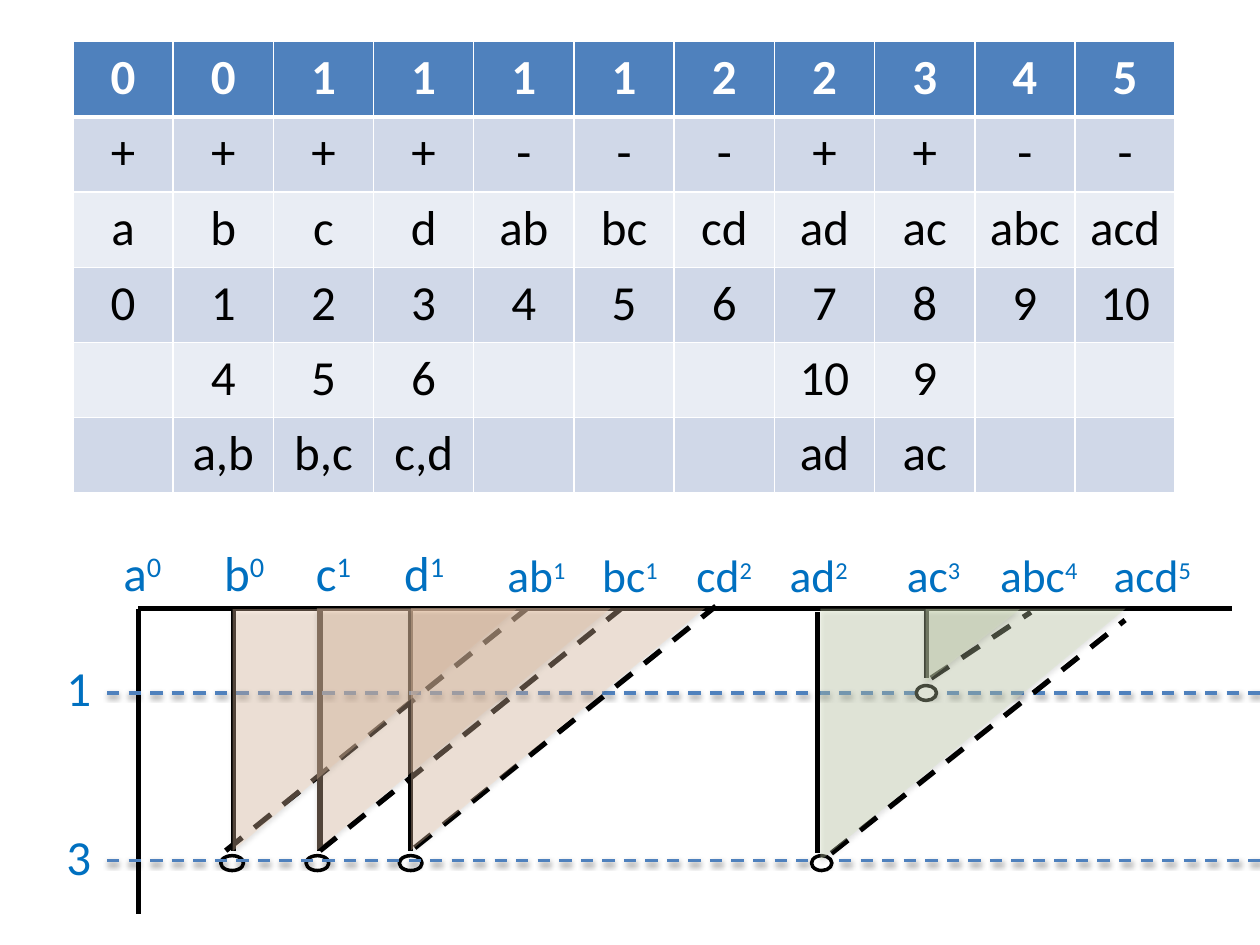
from dataclasses import dataclass
from typing import NamedTuple

import lxml.etree
import pptx
import pptx.dml.color
import pptx.enum.dml
import pptx.enum.shapes
import pptx.enum.text
import pptx.oxml
import pptx.oxml.ns
import pptx.util

Cm = pptx.util.Cm
Pt = pptx.util.Pt
Shape = pptx.enum.shapes.MSO_SHAPE
qn = pptx.oxml.ns.qn


@dataclass(frozen=True)
class Theme:
    font: str = "Calibri"
    head: str = "4F81BD"
    bands: tuple = ("D0D8E8", "E9EDF4")
    white: str = "FFFFFF"
    black: str = "000000"
    label: str = "0070C0"
    peach: str = "FCD5B5"
    green: str = "D7E4BD"
    large: int = 28
    small: int = 26
    power: int = 24
    thick: float = 3
    level: float = 1.75
    ring: float = 2
    clear: int = 32


THEME = Theme()


class Label(NamedTuple):
    text: str
    power: str
    left: float
    width: float
    height: float = 1.45
    top: float = 10.82
    size: int = THEME.large
    raised: int = THEME.large


class Wedge(NamedTuple):
    stem: tuple  # x, top, bottom
    slope: tuple  # x1, y1, x2, y2
    ring: tuple  # left, top, width
    area: tuple  # left, top, width, height
    fill: str


def small(text: str, power: str, left: float, width: float, height: float = 1.37) -> Label:
    return Label(text, power, left, width, height, 10.9, THEME.small, THEME.power)


ROWS = [
    "0 0 1 1 1 1 2 2 3 4 5".split(),
    "+ + + + - - - + + - -".split(),
    "a b c d ab bc cd ad ac abc acd".split(),
    [str(n) for n in range(11)],
    ["", "4", "5", "6", "", "", "", "10", "9", "", ""],
    ["", "a,b", "b,c", "c,d", "", "", "", "ad", "ac", "", ""],
]
LABELS = [
    Label("a", "0", 2.24, 1.6), Label("b", "0", 4.27, 1.6, 2.64),
    Label("c", "1", 6.12, 1.6), Label("d", "1", 7.9, 1.6),
    small("ab", "1", 9.98, 2.29, 2.49), small("bc", "1", 11.89, 1.7),
    small("cd", "2", 13.79, 1.7), small("ad", "2", 15.67, 2.54),
    small("ac", "3", 18.03, 2.54), small("abc", "4", 19.91, 2.57),
    small("acd", "5", 22.2, 2.57),
    Label("1", "", 1.09, 1.07, top=13.13), Label("3", "", 1.09, 1.07, top=16.54),
]
AXIS = 12.27
LEVELS = (17.35, 13.97)
LEFT = [
    Wedge((4.7, AXIS, 17.15), (4.55, 17.15, 10.62, AXIS), (4.45, 17.25, 0.46),
          (4.69, 12.28, 5.72, 4.88), THEME.peach),
    Wedge((6.45, AXIS, 17.15), (6.45, 17.15, 12.52, AXIS), (6.17, 17.25, 0.46),
          (6.39, 12.26, 5.92, 4.88), THEME.peach),
    Wedge((8.28, AXIS, 17.15), (8.36, 17.09, 14.43, 12.22), (8.05, 17.25, 0.46),
          (8.29, 12.26, 5.92, 4.88), THEME.peach),
]
RIGHT = [
    Wedge((16.48, 12.34, 17.2), (16.76, 17.2, 22.68, 12.5), (16.36, 17.25, 0.41),
          (16.54, AXIS, 6.15, 5.08), THEME.green),
    Wedge((18.67, AXIS, 13.67), (18.77, 13.67, 20.78, 12.34), (18.47, 13.82, 0.41),
          (18.66, 12.28, 1.9, 1.47), THEME.green),
]


def rgb(code: str):
    return pptx.dml.color.RGBColor.from_string(code)


def style(item, **values) -> None:
    for name, value in values.items():
        setattr(item, name, value)


def write(para, text: str, size: float, code: str, bold: bool = False):
    run = para.add_run()
    run.text = text
    style(run.font, name=THEME.font, size=Pt(size), bold=bold)
    run.font.color.rgb = rgb(code)
    return run


def add_shade(parent, alpha: int, dist: float) -> None:
    """Put a soft black shadow straight below."""
    shade = lxml.etree.SubElement(parent, qn("a:outerShdw"), blurRad=str(Pt(3.1)),
                                  dist=str(Pt(dist)), dir="5400000", rotWithShape="0")
    tone = lxml.etree.SubElement(shade, qn("a:srgbClr"), val=THEME.black)
    lxml.etree.SubElement(tone, qn("a:alpha"), val=str(alpha * 1000))


def add_line(slide, ends: tuple, code: str = THEME.black, width: float = THEME.thick,
             dash: bool = False):
    line = slide.shapes.add_connector(pptx.enum.shapes.MSO_CONNECTOR.STRAIGHT, *map(Cm, ends))
    line.line.color.rgb = rgb(code)
    line.line.width = Pt(width)
    if dash:
        line.line.dash_style = pptx.enum.dml.MSO_LINE.DASH
    return lxml.etree.SubElement(line._element.spPr, qn("a:effectLst"))


def add_label(slide, label: Label) -> None:
    box = slide.shapes.add_textbox(*map(Cm, (label.left, label.top, label.width, label.height)))
    style(box.text_frame, word_wrap=True,
          auto_size=pptx.enum.text.MSO_AUTO_SIZE.SHAPE_TO_FIT_TEXT)
    para = box.text_frame.paragraphs[0]
    write(para, label.text, label.size, THEME.label)
    if label.power:
        run = write(para, label.power, label.raised, THEME.label)
        run.font._element.set("baseline", "30000")


def add_edge(cell, side: str, width: float) -> None:
    edge = lxml.etree.SubElement(cell._tc.get_or_add_tcPr(), qn("a:ln" + side),
                                 w=str(Pt(width)))
    fill = lxml.etree.SubElement(edge, qn("a:solidFill"))
    lxml.etree.SubElement(fill, qn("a:srgbClr"), val=THEME.white)


def add_grid(slide) -> None:
    wide, high = 22.23, 9.1
    grid = slide.shapes.add_table(len(ROWS), len(ROWS[0]),
                                  *map(Cm, (1.47, 0.84, wide, high))).table
    for col in grid.columns:
        col.width = Cm(wide / len(ROWS[0]))
    for r, texts in enumerate(ROWS):
        grid.rows[r].height = Cm(high / len(ROWS))
        for c, text in enumerate(texts):
            cell = grid.cell(r, c)
            for side in "LRTB":
                add_edge(cell, side, 3 if (r, side) in ((0, "B"), (1, "T")) else 1)
            cell.fill.solid()
            cell.fill.fore_color.rgb = rgb(THEME.bands[(r - 1) % 2] if r else THEME.head)
            para = cell.text_frame.paragraphs[0]
            para.alignment = pptx.enum.text.PP_ALIGN.CENTER
            if text:
                write(para, text, THEME.large, THEME.black if r else THEME.white, not r)


def add_form(slide, kind, frame: tuple, code: str):
    form = slide.shapes.add_shape(kind, *map(Cm, frame))
    form.shadow.inherit = False
    form.fill.solid()
    form.fill.fore_color.rgb = rgb(code)
    return form


def add_marks(slide, wedge: Wedge) -> None:
    x, top, base = wedge.stem
    add_line(slide, (x, top, x, base))
    add_line(slide, wedge.slope, dash=True)
    ring = add_form(slide, Shape.OVAL, (*wedge.ring, 0.3), THEME.white)
    ring.line.color.rgb = rgb(THEME.black)
    ring.line.width = Pt(THEME.ring)


def add_area(slide, wedge: Wedge) -> None:
    left, top, wide, high = wedge.area
    shift = (wide - high) / 2  # the frame is given before its quarter turn
    area = add_form(slide, Shape.RIGHT_TRIANGLE, (left + shift, top - shift, high, wide),
                    wedge.fill)
    area.rotation = 90
    area.line.fill.background()
    props = area._element.spPr
    tone = props.find(qn("a:solidFill")).find(qn("a:srgbClr"))
    lxml.etree.SubElement(tone, qn("a:alpha"), val=str(THEME.clear * 1000))
    add_shade(props.find(qn("a:effectLst")), 35, 1.8)


def main() -> None:
    deck = pptx.Presentation()
    style(deck, slide_width=Cm(25.4), slide_height=Cm(19.05))
    slide = deck.slides.add_slide(deck.slide_layouts[6])
    add_grid(slide)
    for label in LABELS:
        add_label(slide, label)
    # Axes
    add_line(slide, (2.79, AXIS, 24.84, AXIS))
    add_line(slide, (2.79, AXIS, 2.79, 18.42))
    # Left wedges lie below the level lines, right ones above
    for wedge in LEFT:
        add_marks(slide, wedge)
    for y in LEVELS:
        add_shade(add_line(slide, (2.16, y, 25.43, y), THEME.head, THEME.level, True), 38, 1.6)
    for wedge in LEFT:
        add_area(slide, wedge)
    for wedge in RIGHT:
        add_marks(slide, wedge)
    for wedge in RIGHT:
        add_area(slide, wedge)
    deck.save("out.pptx")


if __name__ == "__main__":
    main()
